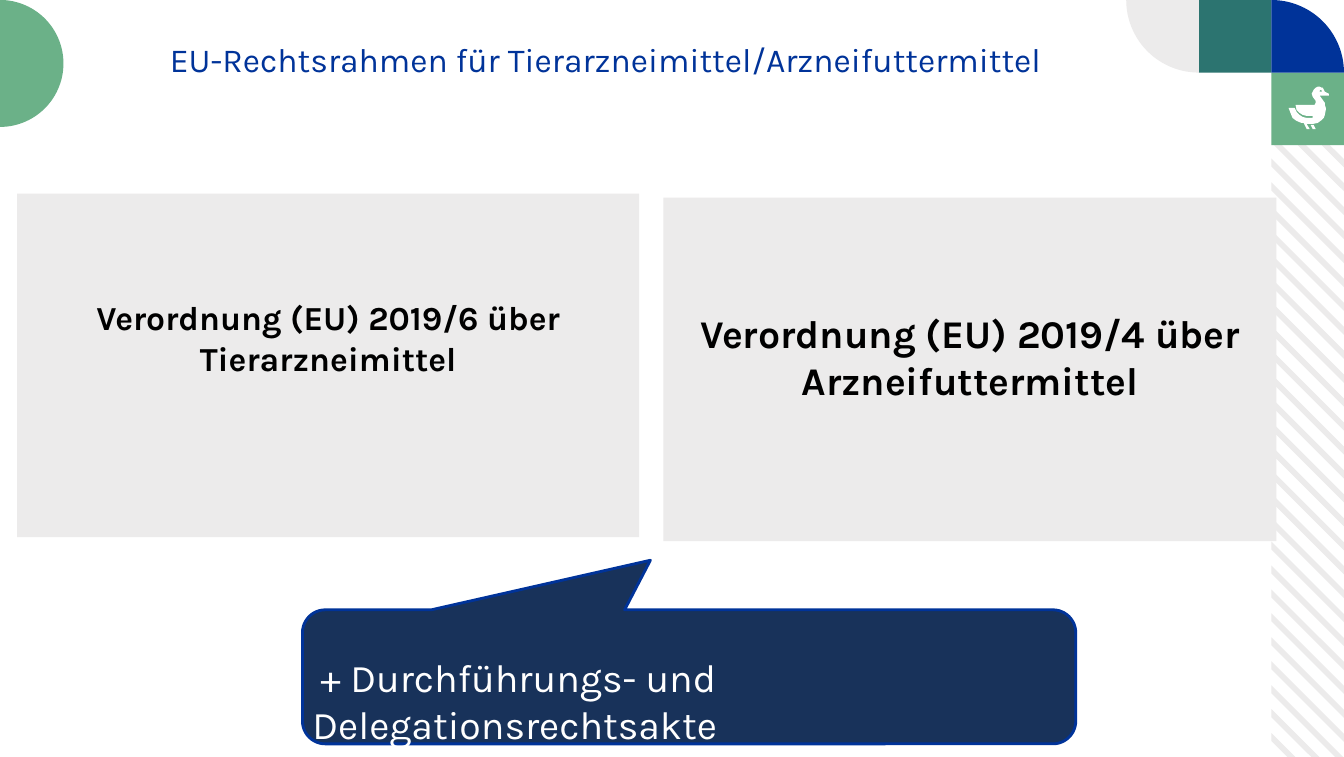
from math import cos, sin, radians
from pptx import Presentation
from pptx.dml.color import RGBColor
from pptx.enum.shapes import MSO_SHAPE
from pptx.enum.text import MSO_ANCHOR, PP_ALIGN
from pptx.util import Pt

PX = 9144
W, H = 1333, 751
TILE = 72
FONT = "Karla"
COLORS = {
    "grey": "ECEBEB",
    "teal": "2C7470",
    "green": "6BB188",
    "blue": "003399",
    "navy": "18325A",
    "white": "FFFFFF",
    "black": "000000",
}
GOOSE_FOOT = [(27, 42), (25, 38), (22, 38), (24, 42)]
GOOSE_BODY = [
    (40, 7), (36, 5), (35, 3), (34, 1), (33, 1), (33, 5), (31, 5), (31, 4),
    (32, 3), (33, 4), (33, 1), (31, 0), (29, 0), (27, 1), (25, 3), (24, 5),
    (23, 7), (24, 10), (27, 14), (27, 16), (26, 18), (25, 18), (7, 18),
    (8, 23), (11, 26), (14, 28), (18, 29), (24, 29), (24, 31), (18, 31),
    (14, 30), (11, 28), (8, 25), (6, 21), (0, 21), (2, 26), (4, 31), (8, 34),
    (13, 36), (15, 36), (18, 42), (21, 42), (18, 37), (24, 37), (29, 36),
    (33, 33), (35, 31), (36, 28), (37, 23), (37, 21), (36, 18), (36, 16),
    (31, 9), (40, 9),
]


def rgb(name):
    return RGBColor.from_string(COLORS[name])


def paint(sp, fill):
    sp.shadow.inherit = False
    sp.fill.solid()
    sp.fill.fore_color.rgb = rgb(fill)
    sp.line.fill.background()
    return sp


def add_block(slide, box, fill, kind=MSO_SHAPE.RECTANGLE):
    return paint(slide.shapes.add_shape(kind, *(v * PX for v in box)), fill)


def add_outline(slide, contours, fill):
    contours = [[(round(x * PX), round(y * PX)) for x, y in c] for c in contours]
    fb = slide.shapes.build_freeform(*contours[0][0], scale=1.0)
    for i, points in enumerate(contours):
        if i:
            fb.move_to(*points[0])
        fb.add_line_segments(points[1:], close=True)
    return paint(fb.convert_to_shape(), fill)


def add_sector(slide, cx, cy, radius, start, end, fill):
    arc = [(cx + radius * cos(radians(a)), cy + radius * sin(radians(a)))
           for a in range(start, end + 1, 3)]
    add_outline(slide, [[(cx, cy)] + arc], fill)


def write(sp, text, size, color, bold=False, align=PP_ALIGN.CENTER):
    tf = sp.text_frame
    tf.word_wrap = True
    p = tf.paragraphs[0]
    p.text = text
    p.alignment = align
    r = p.runs[0]
    r.font.name = FONT
    r.font.size = Pt(size)
    r.font.bold = bold
    r.font.color.rgb = rgb(color)
    return p


def add_text(slide, box, text, size, color, align=PP_ALIGN.CENTER):
    sp = slide.shapes.add_textbox(*(v * PX for v in box))
    return write(sp, text, size, color, align=align)


def add_stripes(slide, x, y, w, h):
    pitch, band, count = 23.75, 8, 28
    bottom = y + h
    stripes = []
    for i in range(count):
        top = y - 58 + i * pitch
        starts, ends = [], []
        for t in (top, top + band):
            starts.append((x + max(0, y - t), max(t, y)))
            ends.append((x + min(w, bottom - t), min(t + w, bottom)))
        stripes.append([starts[0], ends[0], ends[1], starts[1]])
    add_outline(slide, stripes, "grey")


def add_goose(slide, x, y):
    add_outline(slide, [[(x + dx, y + dy) for dx, dy in c]
                        for c in (GOOSE_FOOT, GOOSE_BODY)], "white")


def add_decoration(slide):
    right, middle = W - TILE, W - 2 * TILE
    add_stripes(slide, right, 2 * TILE, TILE, H - 2 * TILE)
    add_block(slide, (middle, 0, TILE, TILE), "teal")
    add_block(slide, (right, TILE, TILE, TILE), "green")
    add_sector(slide, right, TILE, TILE, 270, 360, "blue")
    add_sector(slide, middle, 0, TILE, 90, 180, "grey")
    add_goose(slide, right + 17, TILE + 14)
    add_sector(slide, 0, 63, 63, -90, 90, "green")


def add_regulation(slide, box, text, size, bottom):
    sp = add_block(slide, box, "grey")
    tf = sp.text_frame
    tf.vertical_anchor = MSO_ANCHOR.MIDDLE
    tf.margin_bottom = bottom * PX
    write(sp, text, size, "black", bold=True)


def add_callout(slide, x, y, w, h):
    sp = add_block(slide, (x, y, w, h), "navy", MSO_SHAPE.ROUNDED_RECTANGULAR_CALLOUT)
    for i, value in enumerate((-0.05, -0.87, 0.17)):
        sp.adjustments[i] = value
    sp.line.color.rgb = rgb("blue")
    sp.line.width = Pt(2)
    p = add_text(slide, (x, y + 38, w + 24, 57),
                 "+ Durchführungs- und Delegationsrechtsakte",
                 28, "white", PP_ALIGN.LEFT)
    p._p.get_or_add_pPr().set("indent", str(8 * PX))


def main():
    prs = Presentation()
    prs.slide_width, prs.slide_height = W * PX, H * PX
    slide = prs.slides.add_slide(prs.slide_layouts[6])
    add_decoration(slide)
    add_text(slide, (83, 34, 1035, 52),
             "EU-Rechtsrahmen für Tierarzneimittel/Arzneifuttermittel", 24, "blue")
    add_regulation(slide, (17, 192, 617, 341),
                   "Verordnung (EU) 2019/6 über Tierarzneimittel", 24, 60)
    add_regulation(slide, (658, 196, 608, 341),
                   "Verordnung (EU) 2019/4 über Arzneifuttermittel", 28, 31)
    add_callout(slide, 300, 605, 767, 133)
    prs.save("out.pptx")


if __name__ == "__main__":
    main()
